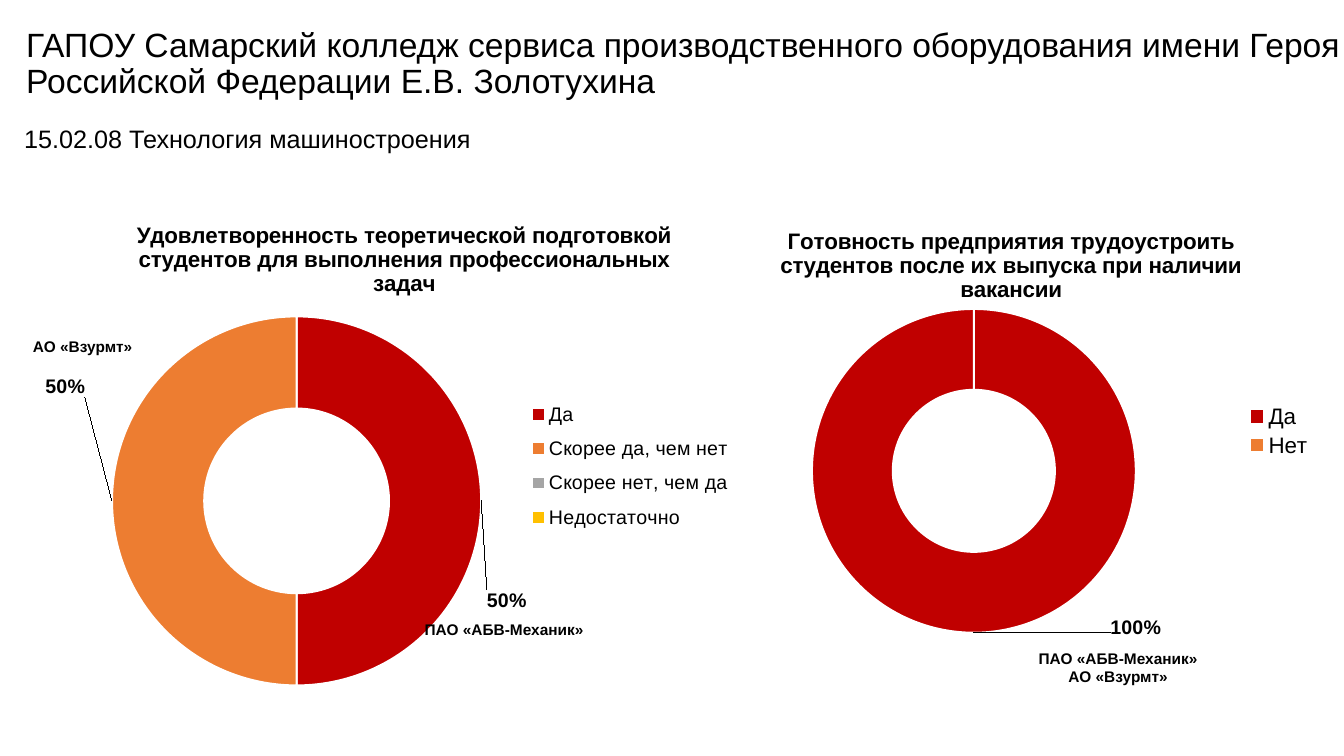
import pptx
import pptx.util
import pptx.dml.color
import pptx.chart.data
import pptx.enum.chart
import pptx.enum.text
import pptx.oxml
from dataclasses import dataclass
from pptx.util import Inches

NS = 'xmlns:c="http://schemas.openxmlformats.org/drawingml/2006/chart"'


@dataclass
class Theme:
    font: str = "Arial"
    ink: str = "000000"
    edge: str = "FFFFFF"
    fills: tuple = ("C00000", "ED7D31", "A5A5A5", "FFC000")
    title: int = 24
    sub: int = 18
    head: int = 16
    label: int = 14
    note: int = 11


def color(code):
    return pptx.dml.color.RGBColor.from_string(code)


def layout(x, y, w=None, h=None, inner=False):
    """Manual chart layout: an offset alone, or a full box."""
    parts = []
    if inner:
        parts.append('<c:layoutTarget val="inner"/>')
    if w is not None:
        parts.append('<c:xMode val="edge"/><c:yMode val="edge"/>')
    sizes = {"x": x, "y": y, "w": w, "h": h}
    parts += [f'<c:{key} val="{val}"/>' for key, val in sizes.items() if val is not None]
    return pptx.oxml.parse_xml(
        f'<c:layout {NS}><c:manualLayout>{"".join(parts)}</c:manualLayout></c:layout>')


def place(owner, box):
    """Put a layout into a chart part in place of any earlier one."""
    for old in owner.xpath("./c:layout"):
        owner.remove(old)
    spot = owner.xpath("./c:legendPos | ./c:idx")
    if spot:
        spot[0].addnext(box)
    else:
        owner.insert(0, box)


class Page:
    def __init__(self, deck, theme):
        self.theme = theme
        self.slide = deck.slides.add_slide(deck.slide_layouts[5])

    def style(self, font, size, bold=False):
        font.name = self.theme.font
        font.size = pptx.util.Pt(size)
        font.bold = bold
        font.color.rgb = color(self.theme.ink)

    def title(self, text, box):
        shape = self.slide.shapes.title
        shape.left, shape.top, shape.width, shape.height = map(Inches, box)
        frame = shape.text_frame
        frame.text = text
        frame.word_wrap = True
        frame.auto_size = pptx.enum.text.MSO_AUTO_SIZE.NONE
        frame.vertical_anchor = pptx.enum.text.MSO_ANCHOR.MIDDLE
        para = frame.paragraphs[0]
        para.alignment = pptx.enum.text.PP_ALIGN.LEFT
        para.line_spacing = 0.9
        self.style(para.runs[0].font, self.theme.title)

    def text(self, text, box, size, bold=False, center=False):
        frame = self.slide.shapes.add_textbox(*map(Inches, box)).text_frame
        frame.word_wrap = True
        frame.text = text
        align = pptx.enum.text.PP_ALIGN
        for para in frame.paragraphs:
            para.alignment = align.CENTER if center else align.LEFT
            self.style(para.runs[0].font, size, bold)

    def note(self, text, box):
        self.text(text, box, self.theme.note, bold=True, center=True)

    def ring(self, head, data, box, plot, shifts, size, key=None):
        """Doughnut chart; shifts move the labels of the first points."""
        source = pptx.chart.data.CategoryChartData(number_format="0%")
        source.categories = list(data)
        source.add_series("Series 1", list(data.values()))
        chart = self.slide.shapes.add_chart(
            pptx.enum.chart.XL_CHART_TYPE.DOUGHNUT, *map(Inches, box), source).chart
        self.style(chart.font, self.theme.label)
        chart.has_title = True
        frame = chart.chart_title.text_frame
        frame.text = head
        self.style(frame.paragraphs[0].runs[0].font, self.theme.head, True)
        chart.chart_title.include_in_layout = False

        chart.has_legend = True
        legend = chart.legend
        legend.position = pptx.enum.chart.XL_LEGEND_POSITION.RIGHT
        legend.include_in_layout = False
        self.style(legend.font, size)
        if key:
            place(legend._element, layout(*key))

        area = chart.plots[0]
        area.vary_by_categories = True
        place(chart._chartSpace.xpath(".//c:plotArea")[0], layout(*plot, inner=True))
        area._element.xpath("./c:holeSize")[0].set("val", "50")
        self.labels(area.series[0], len(data), shifts)

    def labels(self, series, count, shifts):
        tags = series.data_labels
        tags.show_value = True
        tags.number_format = "0%"
        tags.number_format_is_linked = False
        self.style(tags.font, self.theme.label, True)
        lead = tags._element.xpath("./c:showLeaderLines")
        if lead:
            lead[0].set("val", "1")
        else:
            tags._element.append(pptx.oxml.parse_xml(f'<c:showLeaderLines {NS} val="1"/>'))
        for num in range(count):
            point = series.points[num]
            point.format.fill.solid()
            point.format.fill.fore_color.rgb = color(self.theme.fills[num])
            point.format.line.color.rgb = color(self.theme.edge)
            point.format.line.width = pptx.util.Pt(1.5)
            self.style(point.data_label.font, self.theme.label, True)
            tag = tags._element.xpath(f'./c:dLbl[c:idx/@val="{num}"]')[0]
            if num < len(shifts):
                spot = layout(*shifts[num])
                place(tag, spot)
                spot.addnext(pptx.oxml.parse_xml(
                    f'<c:numFmt {NS} formatCode="0%" sourceLinked="0"/>'))
            else:
                for part in list(tag)[1:]:
                    tag.remove(part)
                tag.append(pptx.oxml.parse_xml(f'<c:delete {NS} val="1"/>'))


def main():
    deck = pptx.Presentation()
    deck.slide_width, deck.slide_height = Inches(13.33), Inches(7.5)
    theme = Theme()
    page = Page(deck, theme)
    plant, works = "ПАО «АБВ-Механик»", "АО «Взурмт»"

    page.title("ГАПОУ Самарский колледж сервиса производственного оборудования "
               "имени Героя Российской Федерации Е.В. Золотухина",
               (0.16, 0.15, 13.33, 0.98))
    page.text("15.02.08 Технология машиностроения", (0.14, 1.17, 6.8, 0.4), theme.sub)
    page.ring("Удовлетворенность теоретической подготовкой студентов "
              "для выполнения профессиональных задач",
              {"Да": 0.5, "Скорее да, чем нет": 0.5,
               "Скорее нет, чем да": 0, "Недостаточно": 0},
              (0.45, 2, 7.12, 4.95), (0.09, 0.23, 0.52, 0.74),
              [(0.1, 0.2), (-0.13, -0.23)], theme.label, (0.67, 0.38, 0.29, 0.3))
    page.ring("Готовность предприятия трудоустроить студентов "
              "после их выпуска при наличии вакансии",
              {"Да": 1, "Нет": 0},
              (6.94, 2.07, 6.18, 4.41), (0.18, 0.22, 0.52, 0.74),
              [(0.26, 0.08)], theme.head)
    page.note(plant, (3.7, 6.1, 2.6, 0.29))
    page.note(works, (-0.48, 3.3, 2.6, 0.29))
    page.note(f"{plant}\n{works}", (9.79, 6.39, 2.6, 0.47))
    deck.save("out.pptx")


if __name__ == "__main__":
    main()
